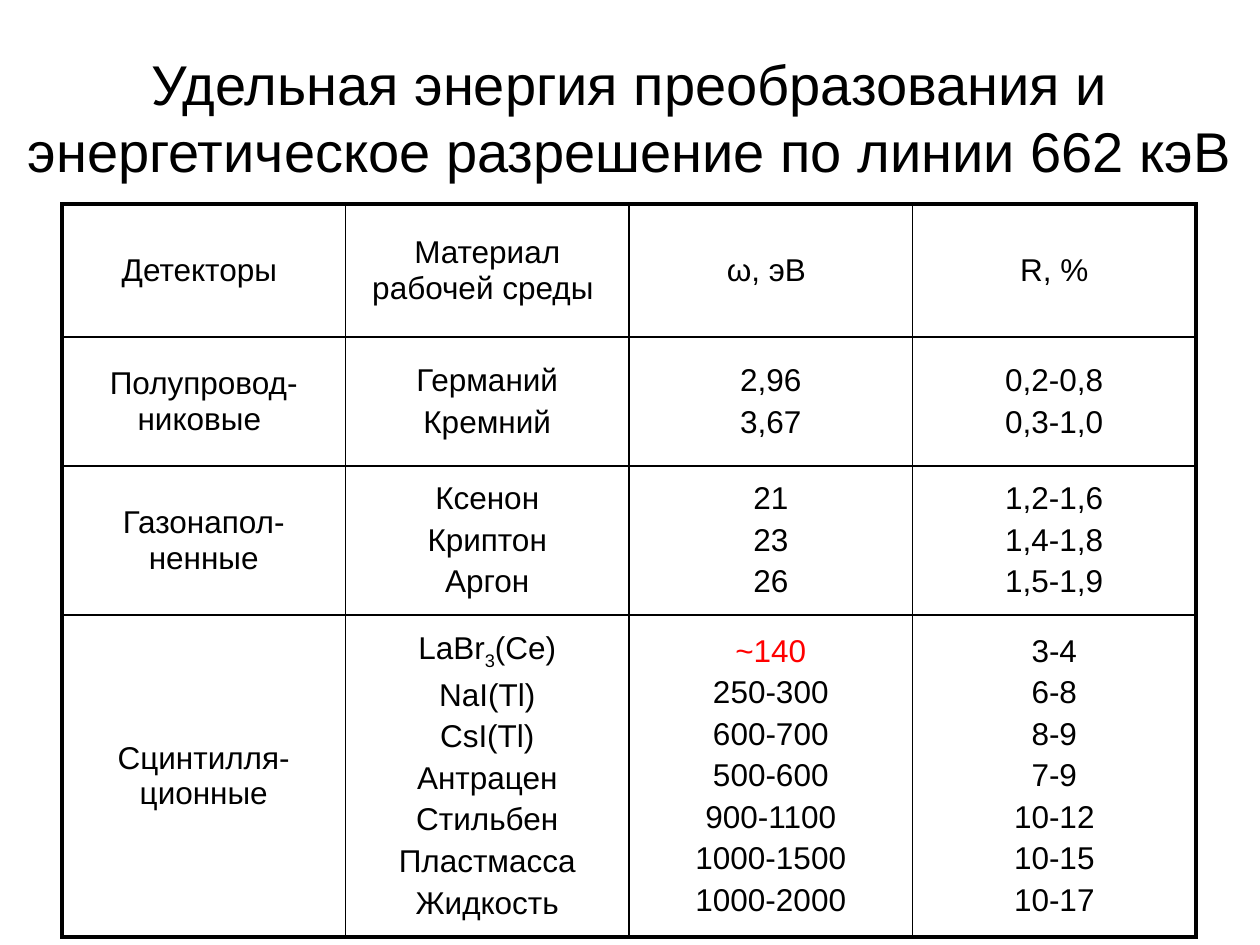
from lxml import etree
from pptx import Presentation
from pptx import util as u
from pptx.dml.color import RGBColor
from pptx.enum import text
from pptx.oxml import ns

SCALE = 914400 / 126  # EMU per px
COLORS = {"ink": "000000", "accent": "FF0000"}
FONT = "Arial"
TITLE = "Удельная энергия преобразования и энергетическое разрешение по линии 662 кэВ"
TITLE_BOX = {"left": 15, "top": 38, "width": 1230, "height": 158}
TABLE_BOX = {"left": 62, "top": 204, "width": 1134, "height": 733}
ROW_HEIGHTS = [133, 129, 149, 322]
INNER_LINE, OUTER_LINE = 1, 2.25

# One list of cells per row; a line break starts a paragraph, _x_ is a subscript
ROWS = [
    ["Детекторы ", "Материал рабочей среды ", "ω, эВ ", "R, %"],
    ["Полупровод-никовые ", "Германий\nКремний", "2,96\n3,67", "0,2-0,8\n0,3-1,0"],
    ["Газонапол-ненные", "Ксенон\nКриптон\nАргон", "21\n23\n26",
     "1,2-1,6\n1,4-1,8\n1,5-1,9"],
    ["Сцинтилля-ционные",
     "LaBr_3_(Ce)\nNaI(Tl)\nCsI(Tl)\nАнтрацен\nСтильбен\nПластмасса\nЖидкость",
     "~140\n250-300\n600-700\n500-600\n900-1100\n1000-1500\n1000-2000",
     "3-4\n6-8\n8-9\n7-9\n10-12\n10-15\n10-17"],
]
HIGHLIGHTED = "~140"


def px(length):
    return u.Emu(round(length * SCALE))


def set_attributes(target, values):
    for name, value in values.items():
        setattr(target, name, value)


def add_run(paragraph, wording, size, color="ink"):
    run = paragraph.add_run()
    run.text = wording
    set_attributes(run.font, {"name": FONT, "size": u.Pt(size), "bold": False})
    run.font.color.rgb = RGBColor.from_string(COLORS[color])
    return run


def add_title(slide):
    title = slide.shapes.title
    set_attributes(title, {name: px(value) for name, value in TITLE_BOX.items()})
    frame = title.text_frame
    set_attributes(frame, {"word_wrap": True, "auto_size": text.MSO_AUTO_SIZE.NONE,
                           "vertical_anchor": text.MSO_ANCHOR.MIDDLE})
    paragraph = frame.paragraphs[0]
    paragraph.alignment = text.PP_ALIGN.CENTER
    add_run(paragraph, TITLE, 32)


def fill_cell(cell, content):
    cell.vertical_anchor = text.MSO_ANCHOR.MIDDLE
    frame = cell.text_frame
    for index, line in enumerate(content.split("\n")):
        paragraph = frame.add_paragraph() if index else frame.paragraphs[0]
        set_attributes(paragraph, {"alignment": text.PP_ALIGN.CENTER,
                                   "space_before": u.Pt(3.6)})
        color = "accent" if line == HIGHLIGHTED else "ink"
        for part_index, part in enumerate(line.split("_")):
            run = add_run(paragraph, part, 18, color)
            if part_index % 2:
                run._r.get_or_add_rPr().set("baseline", "-25000")


def set_borders(cell, outer_sides):
    properties = cell._tc.get_or_add_tcPr()
    for side, is_outer in outer_sides.items():
        width = u.Pt(OUTER_LINE if is_outer else INNER_LINE)
        line = etree.SubElement(properties, ns.qn(f"a:ln{side}"), w=str(width))
        fill = etree.SubElement(line, ns.qn("a:solidFill"))
        etree.SubElement(fill, ns.qn("a:srgbClr"), val=COLORS["ink"])


def add_detector_table(slide):
    row_count, column_count = len(ROWS), len(ROWS[0])
    box = [px(value) for value in TABLE_BOX.values()]
    table = slide.shapes.add_table(row_count, column_count, *box).table
    set_attributes(table, {"first_row": False, "horz_banding": False})
    for column in table.columns:
        column.width = px(TABLE_BOX["width"] / column_count)
    for row_index, (height, contents) in enumerate(zip(ROW_HEIGHTS, ROWS)):
        table.rows[row_index].height = px(height)
        for column_index, content in enumerate(contents):
            cell = table.cell(row_index, column_index)
            fill_cell(cell, content)
            # Thick lines on the outer frame only
            set_borders(cell, {"L": column_index == 0,
                               "R": column_index == column_count - 1,
                               "T": row_index == 0,
                               "B": row_index == row_count - 1})
            cell.fill.background()


def main():
    presentation = Presentation()
    set_attributes(presentation, {"slide_width": px(1260), "slide_height": px(945)})
    slide = presentation.slides.add_slide(presentation.slide_layouts[5])
    add_title(slide)
    add_detector_table(slide)
    presentation.save("out.pptx")


if __name__ == "__main__":
    main()
